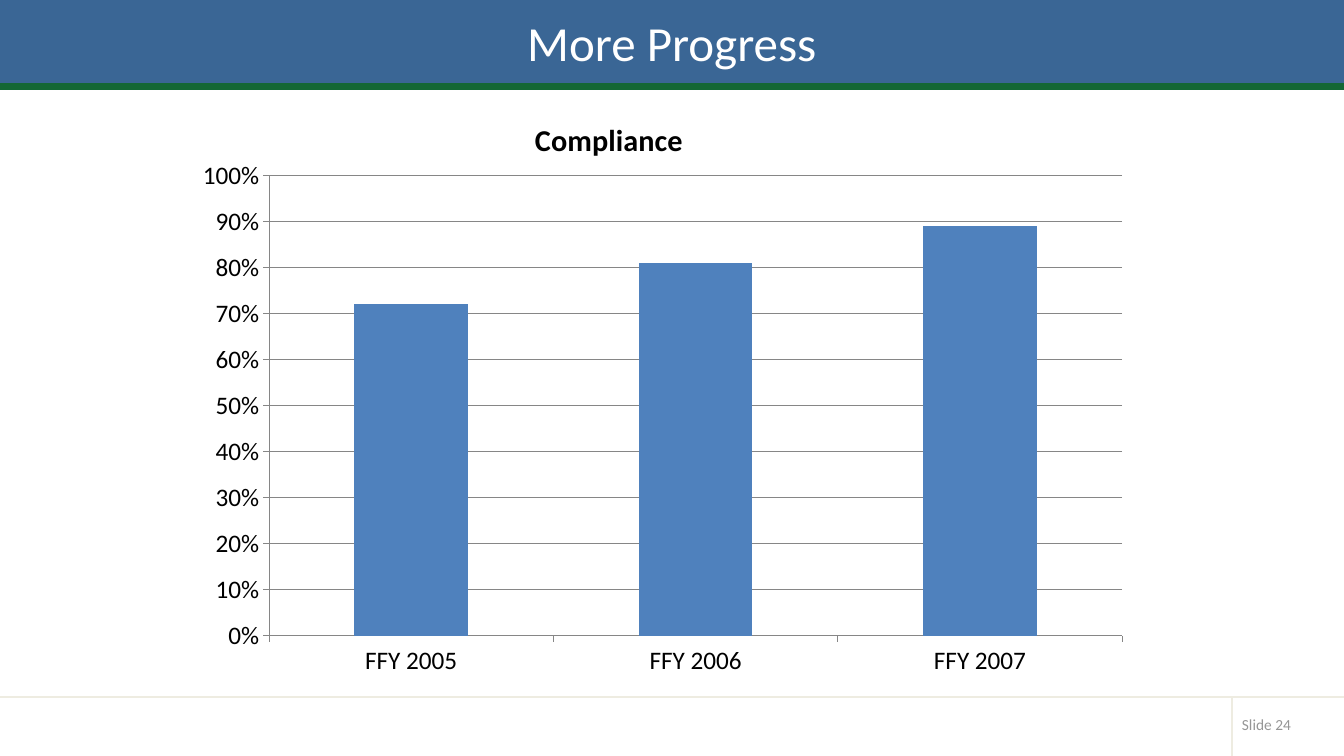
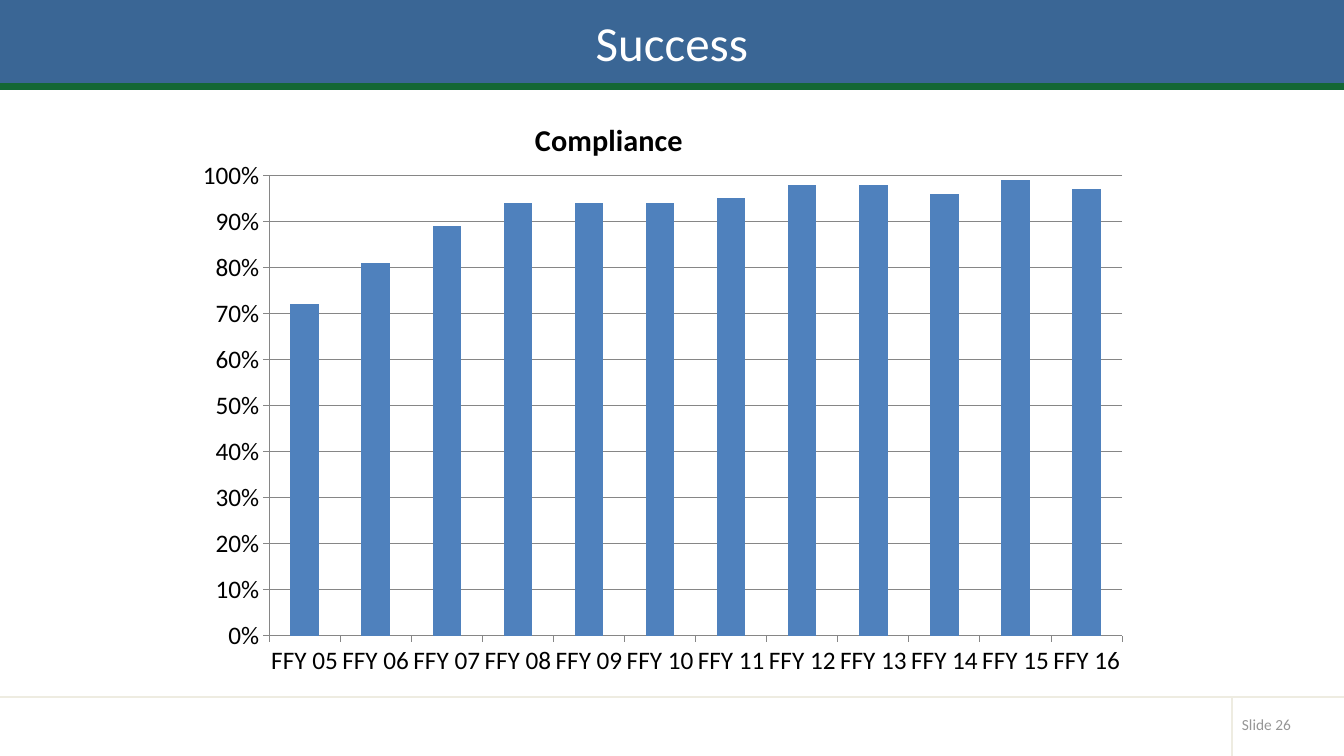
from lxml import etree
from pptx import Presentation
from pptx.chart.data import CategoryChartData
from pptx.dml.color import RGBColor
from pptx.enum import chart as charts, shapes, text
from pptx.oxml import parse_xml
from pptx.oxml.ns import nsdecls, qn
from pptx.util import Pt

SLIDES = [
    {
        "title": "More Progress",
        "number": 24,
        "categories": [f"FFY {year}" for year in range(2005, 2008)],
        "values": [0.72, 0.81, 0.89],
    },
    {
        "title": "Success",
        "number": 26,
        "categories": [f"FFY {year:02}" for year in range(5, 17)],
        "values": [0.72, 0.81, 0.89, 0.94, 0.94, 0.94,
                   0.95, 0.98, 0.98, 0.96, 0.99, 0.97],
    },
]
SERIES_NAME = "Compliance"

FONT = "Calibri"
BLUE = RGBColor(0x3A, 0x66, 0x95)
GREEN = RGBColor(0x13, 0x67, 0x35)
CREAM = RGBColor(0xEE, 0xEC, 0xE1)
GRAY = RGBColor(0x96, 0x96, 0x96)
AXIS_GRAY = RGBColor(0x86, 0x86, 0x86)
COLUMN_BLUE = RGBColor(0x4F, 0x81, 0xBD)
BLACK = RGBColor(0, 0, 0)
WHITE = RGBColor(0xFF, 0xFF, 0xFF)

WIDTH, HEIGHT = 960, 540
TITLE_HEIGHT = 60
STRIPE_HEIGHT = 3.6
FOOTER_TOP = 498
NUMBER_LEFT = 880
CHART_BOX = (132, 72, 684, 420)
PLOT_LAYOUT = {"x": 0.088, "y": 0.127, "w": 0.891, "h": 0.783}
CHART_TITLE_LAYOUT = {"x": 0.36, "y": 0.02}


def points(*lengths):
    return [Pt(length) for length in lengths]


def set_font(font, size, color, bold=False):
    font.name, font.size, font.bold = FONT, Pt(size), bold
    font.color.rgb = color


def add_band(slide, top, height, color):
    band = slide.shapes.add_shape(
        shapes.MSO_SHAPE.RECTANGLE, *points(0, top, WIDTH, height))
    band.shadow.inherit = False
    band.fill.solid()
    band.fill.fore_color.rgb = color
    band.line.color.rgb = color
    band.line.width = Pt(2)


def add_rule(slide, *ends):
    rule = slide.shapes.add_connector(
        shapes.MSO_CONNECTOR.STRAIGHT, *points(*ends))
    rule.line.color.rgb = CREAM
    rule.line.width = Pt(1)
    etree.SubElement(rule._element.spPr, qn("a:effectLst"))


def add_frame(slide, number):
    """Add the bands, rules and slide number that every slide has."""
    add_band(slide, 0, TITLE_HEIGHT, BLUE)
    add_band(slide, TITLE_HEIGHT, STRIPE_HEIGHT, GREEN)
    add_rule(slide, 0, FOOTER_TOP, WIDTH, FOOTER_TOP)
    add_rule(slide, NUMBER_LEFT, FOOTER_TOP, NUMBER_LEFT, HEIGHT)
    box = slide.shapes.add_textbox(*points(NUMBER_LEFT, 507, 71, 21))
    frame = box.text_frame
    frame.word_wrap = True
    frame.vertical_anchor = text.MSO_ANCHOR.MIDDLE
    frame.text = f"Slide {number}"
    set_font(frame.paragraphs[0].runs[0].font, 11, GRAY)


def place_title(slide, wording):
    title = slide.shapes.title
    title.left, title.top, title.width, title.height = points(
        0, 0, WIDTH, TITLE_HEIGHT)
    frame = title.text_frame
    frame.text = wording
    frame.vertical_anchor = text.MSO_ANCHOR.MIDDLE
    paragraph = frame.paragraphs[0]
    paragraph.alignment = text.PP_ALIGN.CENTER
    set_font(paragraph.runs[0].font, 35, WHITE)
    slide.shapes._spTree.append(title._element)  # in front of the band


def manual_layout(fractions, inner=False):
    target = '<c:layoutTarget val="inner"/>' if inner else ""
    modes = "".join(f'<c:{key}Mode val="edge"/>' for key in "xy")
    sizes = "".join(f'<c:{key} val="{value}"/>'
                    for key, value in fractions.items())
    return parse_xml(f'<c:layout {nsdecls("c")}><c:manualLayout>'
                     f'{target}{modes}{sizes}</c:manualLayout></c:layout>')


def style_line(line):
    line.color.rgb = AXIS_GRAY
    line.width = Pt(0.75)


def add_column_chart(slide, categories, values):
    data = CategoryChartData(number_format="0%")
    data.categories = categories
    data.add_series(SERIES_NAME, values)
    chart = slide.shapes.add_chart(
        charts.XL_CHART_TYPE.COLUMN_CLUSTERED, *points(*CHART_BOX), data).chart
    set_font(chart.font, 18, BLACK)
    chart.has_legend = False

    chart.has_title = True
    title = chart.chart_title
    title.text_frame.text = SERIES_NAME
    set_font(title.text_frame.paragraphs[0].runs[0].font, 21.6, BLACK, bold=True)
    title.include_in_layout = False
    for layout in title._element.findall(qn("c:layout")):
        title._element.remove(layout)
    title._element.find(qn("c:tx")).addnext(manual_layout(CHART_TITLE_LAYOUT))

    plot_area = chart._chartSpace.chart.plotArea
    for layout in plot_area.findall(qn("c:layout")):
        plot_area.remove(layout)
    plot_area.insert(0, manual_layout(PLOT_LAYOUT, inner=True))

    plot = chart.plots[0]
    plot.gap_width = 150
    plot.vary_by_categories = False
    column_fill = plot.series[0].format.fill
    column_fill.solid()
    column_fill.fore_color.rgb = COLUMN_BLUE

    for axis in (chart.category_axis, chart.value_axis):
        axis.major_tick_mark = charts.XL_TICK_MARK.OUTSIDE
        axis.minor_tick_mark = charts.XL_TICK_MARK.NONE
        style_line(axis.format.line)
    value_axis = chart.value_axis
    value_axis.minimum_scale, value_axis.maximum_scale = 0, 1
    value_axis.major_unit = 0.1
    value_axis.tick_labels.number_format = "0%"
    value_axis.tick_labels.number_format_is_linked = False
    value_axis.has_major_gridlines = True
    style_line(value_axis.major_gridlines.format.line)


def main():
    presentation = Presentation()
    presentation.slide_width, presentation.slide_height = points(WIDTH, HEIGHT)
    title_only = presentation.slide_layouts[5]
    for content in SLIDES:
        slide = presentation.slides.add_slide(title_only)
        add_frame(slide, content["number"])
        place_title(slide, content["title"])
        add_column_chart(slide, content["categories"], content["values"])
    presentation.save("out.pptx")


if __name__ == "__main__":
    main()
